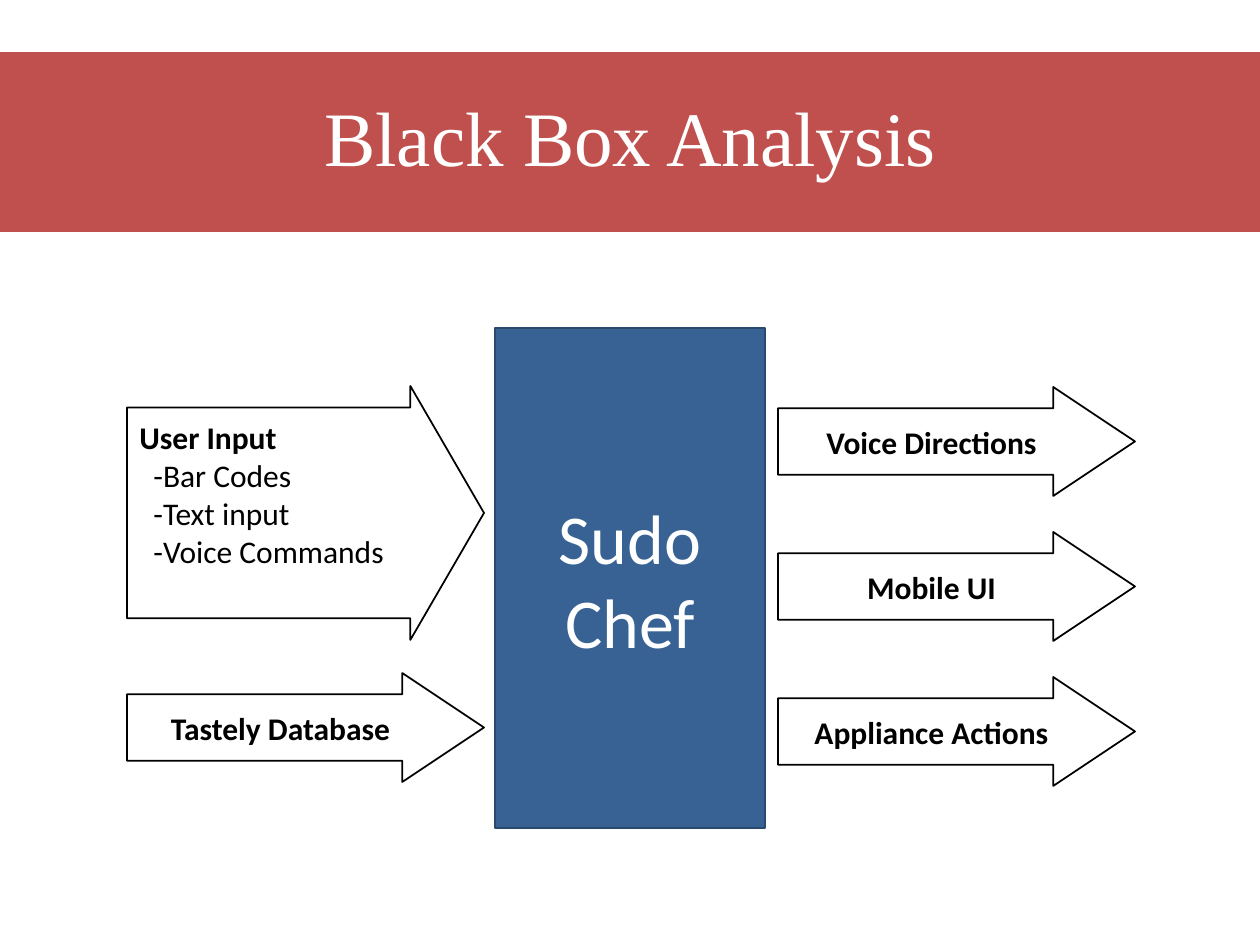
from dataclasses import dataclass

from pptx import Presentation
from pptx.dml.color import RGBColor
from pptx.enum.shapes import MSO_SHAPE
from pptx.enum.text import MSO_ANCHOR, MSO_AUTO_SIZE, PP_ALIGN
from pptx.util import Emu, Pt


@dataclass(frozen=True)
class Theme:
    banner: str = "C0504D"
    box: str = "386294"
    box_line: str = "29496D"
    light: str = "FFFFFF"
    dark: str = "000000"
    title_font: str = "Times New Roman"
    body_font: str = "Calibri"
    title_size: int = 44
    box_size: int = 40
    label_size: int = 18


T = Theme()


def px(n):
    return Emu(round(n * 914400 / 126))


def paint(sp, fill, line, width):
    sp.fill.solid()
    sp.fill.fore_color.rgb = RGBColor.from_string(fill)
    sp.line.color.rgb = RGBColor.from_string(line)
    sp.line.width = Pt(width)


def add_run(p, text, font, size, color, bold=False):
    r = p.add_run()
    r.text = text
    r.font.name = font
    r.font.size = Pt(size)
    r.font.bold = bold
    r.font.color.rgb = RGBColor.from_string(color)


def add_block(s, kind, box, fill, line):
    sp = s.shapes.add_shape(kind, *map(px, box))
    sp.shadow.inherit = False
    paint(sp, fill, line, 1)
    sp.text_frame.vertical_anchor = MSO_ANCHOR.MIDDLE
    return sp


def add_title(s, box, text):
    sp = s.shapes.title
    sp.left, sp.top, sp.width, sp.height = map(px, box)
    paint(sp, T.banner, T.light, 1.5)
    tf = sp.text_frame
    tf.auto_size = MSO_AUTO_SIZE.NONE
    tf.vertical_anchor = MSO_ANCHOR.MIDDLE
    p = tf.paragraphs[0]
    p.alignment = PP_ALIGN.CENTER
    p.line_spacing = 0.9
    add_run(p, text, T.title_font, T.title_size, T.light)


def add_system(s, box, text):
    sp = add_block(s, MSO_SHAPE.RECTANGLE, box, T.box, T.box_line)
    p = sp.text_frame.paragraphs[0]
    p.alignment = PP_ALIGN.CENTER
    add_run(p, text, T.body_font, T.box_size, T.light)


def add_arrow(s, box, heading, items=(), shaft=0.61, head=0.75):
    sp = add_block(s, MSO_SHAPE.RIGHT_ARROW, box, T.light, T.dark)
    sp.adjustments[0], sp.adjustments[1] = shaft, head
    tf = sp.text_frame
    p = tf.paragraphs[0]
    p.alignment = PP_ALIGN.LEFT if items else PP_ALIGN.CENTER
    add_run(p, heading, T.body_font, T.label_size, T.dark, bold=True)
    if items:
        tf.margin_bottom = px(44)
    for item in items:
        p = tf.add_paragraph()
        p.alignment = PP_ALIGN.LEFT
        p._p.get_or_add_pPr().set("marL", str(px(14)))
        add_run(p, item, T.body_font, T.label_size, T.dark)


def add_inputs(s, x, y, w, h):
    items = ["-Bar Codes", "-Text input", "-Voice Commands"]
    add_arrow(s, (x, y, w, 254), "User Input", items, shaft=0.83, head=0.29)
    add_arrow(s, (x, y + 287, w, h), "Tastely Database")


def add_outputs(s, x, y, w, h, pitch):
    labels = ["Voice Directions", "Mobile UI", "Appliance Actions"]
    for i, label in enumerate(labels):
        add_arrow(s, (x, y + i * pitch, w, h), label)


def main():
    prs = Presentation()
    prs.slide_width, prs.slide_height = px(1260), px(945)
    s = prs.slides.add_slide(prs.slide_layouts[5])
    add_title(s, (-9, 51, 1279, 182), "Black Box Analysis")
    add_system(s, (495, 328, 270, 500), "Sudo Chef")
    add_inputs(s, 127, 386, 357, 109)
    add_outputs(s, 778, 387, 357, 109, pitch=145)
    prs.save("out.pptx")


if __name__ == "__main__":
    main()
